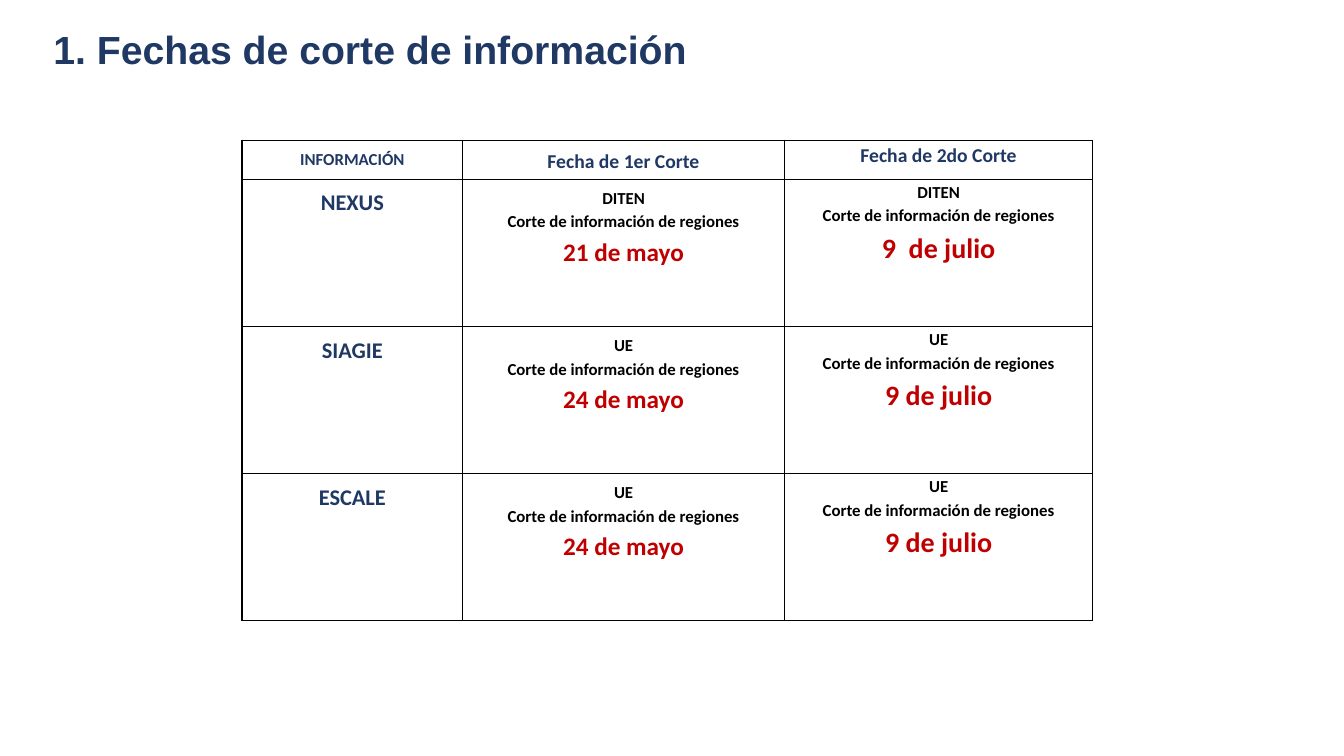
from dataclasses import dataclass

from lxml.etree import SubElement
from pptx import Presentation
from pptx.dml.color import RGBColor
from pptx.enum.text import MSO_ANCHOR, MSO_AUTO_SIZE, PP_ALIGN
from pptx.oxml.ns import qn
from pptx.slide import Slide
from pptx.table import _Cell as Cell
from pptx.text.text import _Paragraph as Paragraph
from pptx.util import Inches, Pt

NAVY = "203864"
RED = "C00000"
BLACK = "000000"
WHITE = "FFFFFF"


@dataclass(frozen=True)
class Line:
    text: str
    size: int
    color: str


@dataclass(frozen=True)
class Column:
    heading: str
    heading_size: int
    width: float
    margin: float


@dataclass(frozen=True)
class Source:
    name: str
    office: str
    first_date: str
    second_date: str

    def cells(self) -> list[list[Line]]:
        """Lines of the three cells in this source's row."""
        cutoff = [
            Line(self.office, 12, BLACK),
            Line("Corte de información de regiones", 12, BLACK),
        ]
        return [
            [Line(self.name, 16, NAVY)],
            [*cutoff, Line(self.first_date, 18, RED)],
            [*cutoff, Line(self.second_date, 20, RED)],
        ]


COLUMNS = [
    Column("INFORMACIÓN", 12, 2.19, 0.06),
    Column("Fecha de 1er Corte", 14, 3.19, 0.06),
    Column("Fecha de 2do Corte", 14, 3.06, 0),
]
SOURCES = [
    Source("NEXUS", "DITEN", "21 de mayo", "9  de julio"),
    Source("SIAGIE", "UE", "24 de mayo", "9 de julio"),
    Source("ESCALE", "UE", "24 de mayo", "9 de julio"),
]
HEADING_HEIGHT = 0.39
SOURCE_HEIGHT = 1.46


def rgb(color: str) -> RGBColor:
    return RGBColor.from_string(color)


def write_line(para: Paragraph, line: Line, font_name: str) -> None:
    para.text = line.text
    for span in para.runs:
        span.font.name = font_name
        span.font.size = Pt(line.size)
        span.font.bold = True
        span.font.color.rgb = rgb(line.color)


def add_borders(cell: Cell) -> None:
    properties = cell._tc.get_or_add_tcPr()
    for side in ("a:lnL", "a:lnR", "a:lnT", "a:lnB"):
        border = SubElement(properties, qn(side), w=str(Pt(1)))
        fill = SubElement(border, qn("a:solidFill"))
        SubElement(fill, qn("a:srgbClr"), val=BLACK)


def fill_cell(cell: Cell, lines: list[Line], margin: float) -> None:
    add_borders(cell)
    cell.fill.solid()
    cell.fill.fore_color.rgb = rgb(WHITE)
    cell.vertical_anchor = MSO_ANCHOR.TOP
    cell.margin_left = cell.margin_right = Inches(margin)
    cell.margin_top = cell.margin_bottom = Inches(margin)
    cell.text_frame.text = "\n".join(line.text for line in lines)
    for para, line in zip(cell.text_frame.paragraphs, lines):
        para.alignment = PP_ALIGN.CENTER
        para.line_spacing = 1.15
        write_line(para, line, "Calibri")


def add_title(page: Slide) -> None:
    title = page.shapes.title
    title.left, title.top = Inches(0.43), Inches(0.2)
    title.width, title.height = Inches(12.38), Inches(0.57)
    frame = title.text_frame
    frame.word_wrap = True
    frame.auto_size = MSO_AUTO_SIZE.SHAPE_TO_FIT_TEXT
    frame.vertical_anchor = MSO_ANCHOR.TOP
    para = frame.paragraphs[0]
    write_line(para, Line("1. Fechas de corte de información", 28, NAVY), "Arial")
    para.alignment = PP_ALIGN.JUSTIFY


def add_dates_table(page: Slide) -> None:
    headings = [[Line(column.heading, column.heading_size, NAVY)] for column in COLUMNS]
    rows = [headings, *(source.cells() for source in SOURCES)]
    heights = [HEADING_HEIGHT] + [SOURCE_HEIGHT] * len(SOURCES)
    width = sum(column.width for column in COLUMNS)
    table = page.shapes.add_table(
        len(rows), len(COLUMNS),
        Inches(2.4), Inches(1.39), Inches(width), Inches(sum(heights)),
    ).table
    for grid_column, column in zip(table.columns, COLUMNS):
        grid_column.width = Inches(column.width)
    for row, height, cells in zip(table.rows, heights, rows):
        row.height = Inches(height)
        for cell, lines, column in zip(row.cells, cells, COLUMNS):
            fill_cell(cell, lines, column.margin)


def main() -> None:
    deck = Presentation()
    deck.slide_width, deck.slide_height = Inches(13.33), Inches(7.5)
    page = deck.slides.add_slide(deck.slide_layouts.get_by_name("Title Only"))
    add_title(page)
    add_dates_table(page)
    deck.save("out.pptx")


if __name__ == "__main__":
    main()
